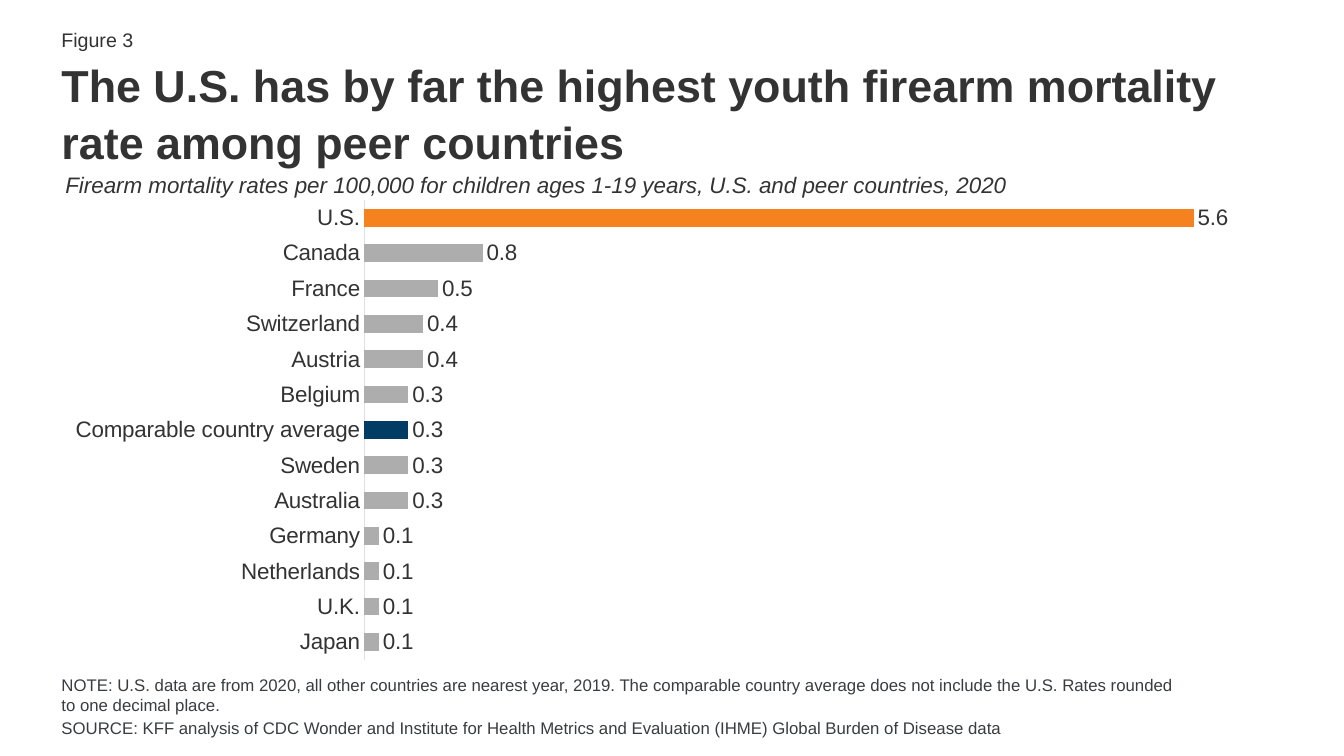
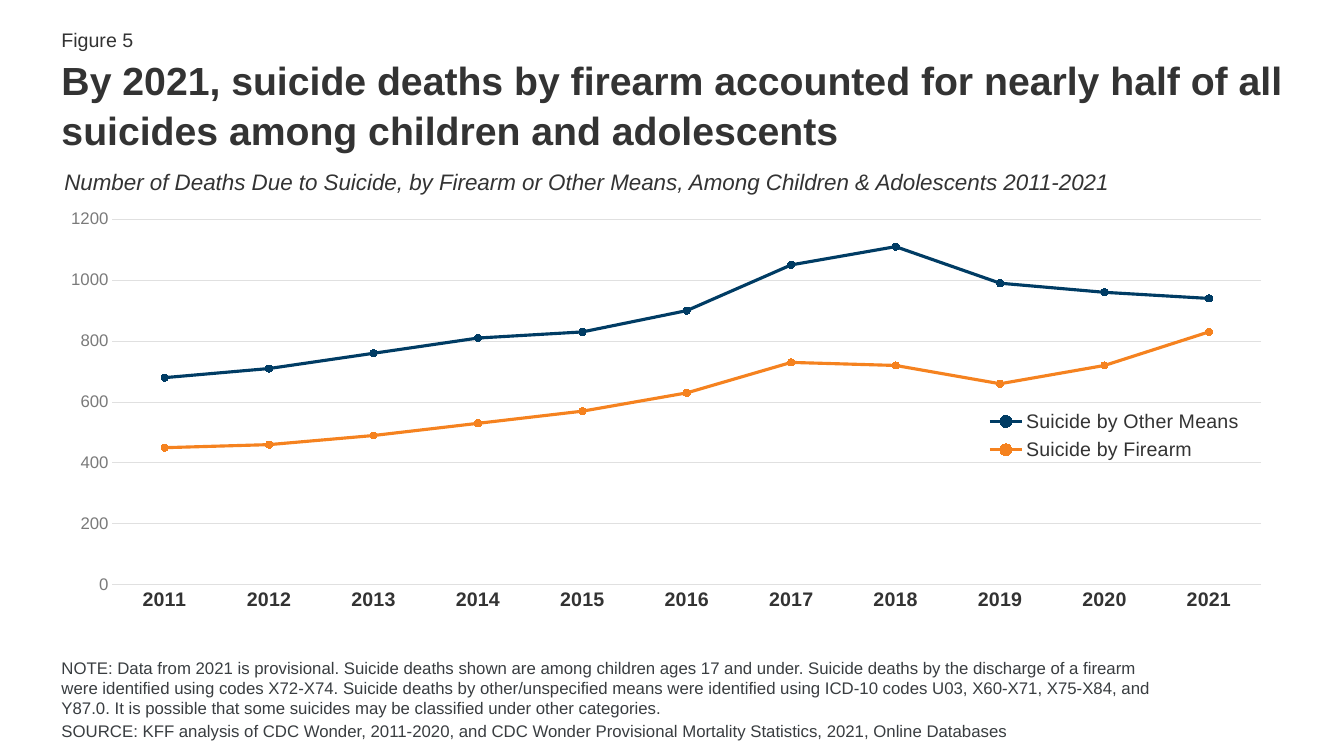
from pptx import Presentation
from pptx import util as u
from pptx.chart.data import CategoryChartData
from pptx.dml.color import RGBColor
from pptx.enum import chart as ch, text as tx
from pptx.oxml import parse_xml
from pptx.oxml.ns import nsdecls, qn

FONT = "Arial"
DARK = RGBColor(0x33, 0x33, 0x33)
NOTE = RGBColor(0x39, 0x3D, 0x40)
MUTED = RGBColor(0x7A, 0x7A, 0x7A)
RULE = RGBColor(0xE0, 0xE0, 0xE0)
GRAY = RGBColor(0xAD, 0xAD, 0xAD)
NAVY = RGBColor(0x00, 0x3C, 0x64)
ORANGE = RGBColor(0xF5, 0x82, 0x1F)
LEFT = 0.51

RATES = [
    ("Japan", 0.1), ("U.K.", 0.1), ("Netherlands", 0.1), ("Germany", 0.1),
    ("Australia", 0.3), ("Sweden", 0.3), ("Comparable country average", 0.3),
    ("Belgium", 0.3), ("Austria", 0.4), ("Switzerland", 0.4),
    ("France", 0.5), ("Canada", 0.8), ("U.S.", 5.6),
]
ACCENTS = {"Comparable country average": NAVY, "U.S.": ORANGE}
YEARS = [str(year) for year in range(2011, 2022)]
DEATHS = [
    ("Suicide by Other Means", NAVY,
     [680, 710, 760, 810, 830, 900, 1050, 1110, 990, 960, 940]),
    ("Suicide by Firearm", ORANGE,
     [450, 460, 490, 530, 570, 630, 730, 720, 660, 720, 830]),
]


def style(font, size, color=DARK, bold=False, italic=False):
    font.name, font.size = FONT, u.Pt(size)
    font.bold, font.italic = bold, italic
    font.color.rgb = color


def place(shape, left, top, width, height):
    shape.left, shape.top = u.Inches(left), u.Inches(top)
    shape.width, shape.height = u.Inches(width), u.Inches(height)


def fill(shape, words, anchor=tx.MSO_ANCHOR.TOP, **look):
    frame = shape.text_frame
    frame.text = words
    frame.word_wrap = True
    frame.auto_size = tx.MSO_AUTO_SIZE.NONE
    frame.vertical_anchor = anchor
    for para in frame.paragraphs:
        para.alignment = tx.PP_ALIGN.LEFT
        for run in para.runs:
            style(run.font, **look)
    return frame.paragraphs


def add_label(slide, words, box, **look):
    label = slide.shapes.add_textbox(*map(u.Inches, box))
    fill(label, words, **look)


def add_title(slide, words, top, size):
    title = slide.shapes.title
    place(title, LEFT, top, 12.32, 0.94)
    for para in fill(title, words, size=size, bold=True):
        para.line_spacing = 1.05


def add_notes(slide, top, lines):
    body = slide.placeholders[1]
    place(body, LEFT, top, 11.26, 0.65)
    for i, para in enumerate(fill(body, "\n".join(lines), size=12, color=NOTE)):
        props = para._p.get_or_add_pPr()
        props.set("marL", "0")
        props.set("indent", "0")
        props.append(parse_xml(f"<a:buNone {nsdecls('a')}/>"))
        para.space_before = u.Pt(2.4 if i else 0)


def add_frame(deck, figure, title, top, size, sub, box, notes, base):
    slide = deck.slides.add_slide(deck.slide_layouts[1])
    add_label(slide, figure, (LEFT, 0.22, 5.15, 0.35),
              anchor=tx.MSO_ANCHOR.MIDDLE, size=14)
    add_title(slide, title, top, size)
    add_label(slide, sub, box, size=16, italic=True)
    add_notes(slide, base, notes)
    return slide


def set_layout(part, spot, inner=False):
    for old in part.findall(qn("c:layout")):
        part.remove(old)
    target = '<c:layoutTarget val="inner"/>' if inner else ""
    modes = "".join(f'<c:{axis}Mode val="edge"/>' for axis in "xy")
    sides = "".join(f'<c:{side} val="{val}"/>' for side, val in zip("xywh", spot))
    part.insert(0 if inner else 1, parse_xml(
        f"<c:layout {nsdecls('c')}><c:manualLayout>{target}{modes}{sides}"
        "</c:manualLayout></c:layout>"))


def add_chart(slide, kind, box, cats, rows, plot, top):
    data = CategoryChartData()
    data.categories = cats
    for name, vals in rows:
        data.add_series(name, vals)
    chart = slide.shapes.add_chart(kind, *map(u.Inches, box), data).chart
    chart.has_title = False
    chart.has_legend = False
    style(chart.font, 10)
    chart.plots[0].vary_by_categories = False
    set_layout(chart.element.find(".//" + qn("c:plotArea")), plot, inner=True)
    for axis in (chart.category_axis, chart.value_axis):
        axis.major_tick_mark = axis.minor_tick_mark = ch.XL_TICK_MARK.NONE
        axis.has_major_gridlines = False
    rule(chart.category_axis.format.line)
    chart.value_axis.minimum_scale = 0
    chart.value_axis.maximum_scale = top
    return chart


def rule(line, color=RULE, width=0.75):
    line.color.rgb = color
    line.width = u.Pt(width)


def paint(part, color):
    part.fill.solid()
    part.fill.fore_color.rgb = color


def add_bars(slide):
    cats, vals = zip(*RATES)
    chart = add_chart(slide, ch.XL_CHART_TYPE.BAR_CLUSTERED,
                      (LEFT, 1.89, 12.16, 4.75), cats, [("Series 1", vals)],
                      (0.255, 0.02, 0.725, 0.96), 6)
    style(chart.category_axis.tick_labels.font, 16)
    chart.value_axis.visible = False
    plot = chart.plots[0]
    plot.gap_width = 98
    bars = plot.series[0]
    paint(bars.format, GRAY)
    for name, color in ACCENTS.items():
        paint(bars.points[cats.index(name)].format, color)
    labels = bars.data_labels
    labels.show_value = True
    labels.number_format = "0.0"
    labels.number_format_is_linked = False
    labels.position = ch.XL_LABEL_POSITION.OUTSIDE_END
    style(labels.font, 16)


def add_lines(slide):
    chart = add_chart(slide, ch.XL_CHART_TYPE.LINE_MARKERS,
                      (LEFT, 2.05, 12.12, 4.17), YEARS,
                      [(name, vals) for name, _, vals in DEATHS],
                      (0.05, 0.03, 0.94, 0.87), 1200)
    style(chart.category_axis.tick_labels.font, 14, bold=True)
    axis = chart.value_axis
    axis.major_unit = 200
    axis.has_major_gridlines = True
    rule(axis.major_gridlines.format.line)
    axis.format.line.fill.background()
    style(axis.tick_labels.font, 12, MUTED)
    for line, (_, color, _) in zip(chart.plots[0].series, DEATHS):
        line.smooth = False
        rule(line.format.line, color, 2.25)
        mark = line.marker
        mark.style, mark.size = ch.XL_MARKER_STYLE.CIRCLE, 5
        paint(mark.format, color)
        rule(mark.format.line, color)
    chart.has_legend = True
    legend = chart.legend
    legend.position = ch.XL_LEGEND_POSITION.BOTTOM
    legend.include_in_layout = False
    style(legend.font, 14)
    set_layout(chart.element.find(".//" + qn("c:legend")), (0.76, 0.47, 0.22, 0.15))


def main():
    deck = Presentation()
    deck.slide_width, deck.slide_height = u.Inches(13.33), u.Inches(7.5)
    add_bars(add_frame(
        deck, "Figure 3",
        "The U.S. has by far the highest youth firearm mortality rate among peer countries",
        0.5, 32,
        "Firearm mortality rates per 100,000 for children ages 1-19 years, "
        "U.S. and peer countries, 2020",
        (0.55, 1.65, 11.6, 0.37),
        ["NOTE: U.S. data are from 2020, all other countries are nearest year, 2019. "
         "The comparable country average does not include the U.S. "
         "Rates rounded to one decimal place.",
         "SOURCE: KFF analysis of CDC Wonder and Institute for Health Metrics and "
         "Evaluation (IHME) Global Burden of Disease data"],
        6.64))
    add_lines(add_frame(
        deck, "Figure 5",
        "By 2021, suicide deaths by firearm accounted for nearly half of all "
        "suicides among children and adolescents",
        0.49, 28,
        "Number of Deaths Due to Suicide, by Firearm or Other Means, "
        "Among Children & Adolescents 2011-2021",
        (0.54, 1.62, 10.7, 0.37),
        ["NOTE: Data from 2021 is provisional. Suicide deaths shown are among children "
         "ages 17 and under. Suicide deaths by the discharge of a firearm were identified "
         "using codes X72-X74. Suicide deaths by other/unspecified means were identified "
         "using ICD-10 codes U03, X60-X71, X75-X84, and Y87.0. It is possible that some "
         "suicides may be classified under other categories.",
         "SOURCE: KFF analysis of CDC Wonder, 2011-2020, and CDC Wonder Provisional "
         "Mortality Statistics, 2021, Online Databases"],
        6.47))
    deck.save("out.pptx")


if __name__ == "__main__":
    main()
